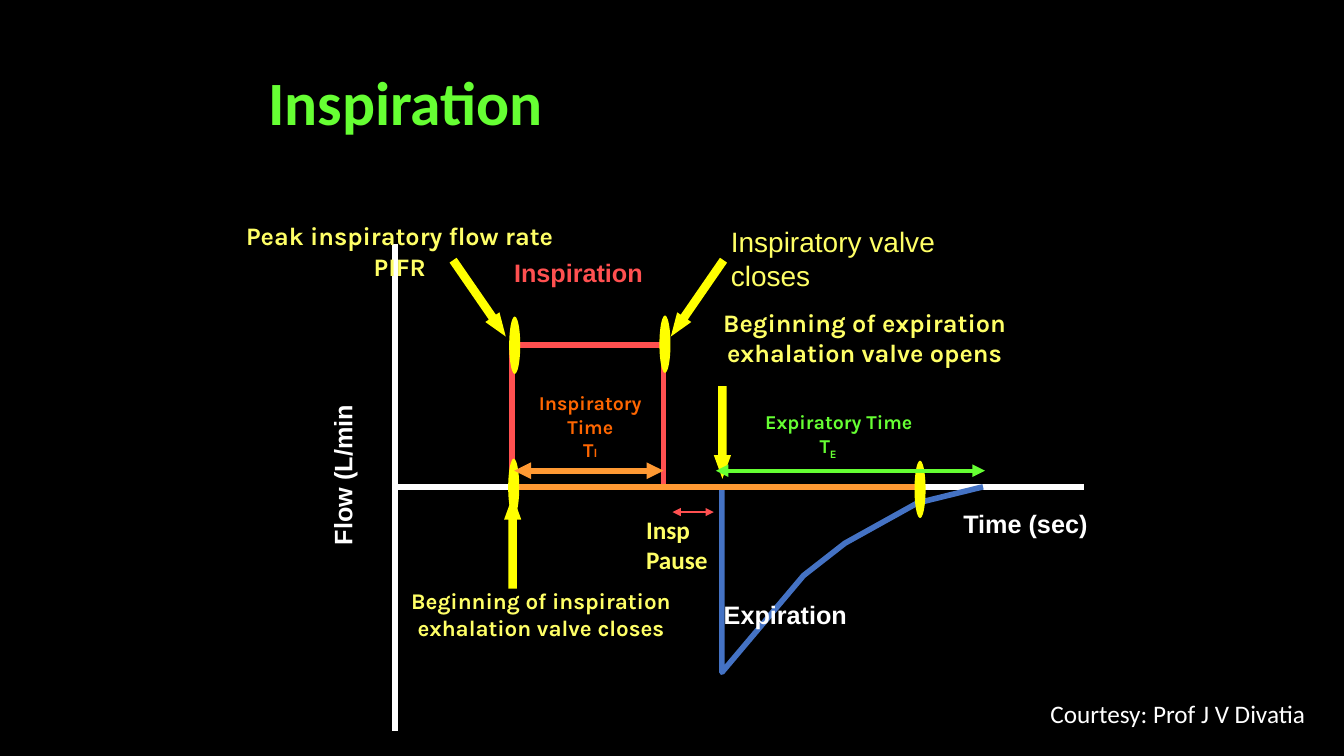
import pptx
import pptx.util
import pptx.dml.color
import pptx.enum.shapes
import pptx.enum.text
import pptx.oxml.ns
import lxml.etree

Inches = pptx.util.Inches
Pt = pptx.util.Pt
RGBColor = pptx.dml.color.RGBColor
MSO_SHAPE = pptx.enum.shapes.MSO_SHAPE
ALIGN = pptx.enum.text.PP_ALIGN

BLACK = RGBColor(0x00, 0x00, 0x00)
WHITE = RGBColor(0xFF, 0xFF, 0xFF)
GREEN = RGBColor(0x66, 0xFF, 0x33)
RED = RGBColor(0xFF, 0x50, 0x50)
BLUE = RGBColor(0x44, 0x72, 0xC4)
ORANGE = RGBColor(0xFF, 0x99, 0x33)
DARK_ORANGE = RGBColor(0xFF, 0x66, 0x00)
YELLOW = RGBColor(0xFF, 0xFF, 0x00)
PALE_YELLOW = RGBColor(0xFF, 0xFF, 0x66)

BASELINE = 4.83
TIME_ARROW_Y = 4.67


def add_child(parent, tag, **attributes):
    return lxml.etree.SubElement(parent, pptx.oxml.ns.qn(tag), **attributes)


def set_title(page, text):
    title = page.shapes.title
    title.left, title.top = Inches(2.42), Inches(0.42)
    title.width, title.height = Inches(8.92), Inches(1.25)
    frame = title.text_frame
    frame.text = text
    frame.margin_left = Inches(0.24)
    frame.vertical_anchor = pptx.enum.text.MSO_ANCHOR.MIDDLE
    para = frame.paragraphs[0]
    para.alignment = ALIGN.LEFT
    para.line_spacing = 0.9
    style_font(para.font, "Calibri", 44, GREEN, True)


def style_font(font, name, size, color, bold):
    font.name = name
    font.size = Pt(size)
    font.color.rgb = color
    font.bold = bold


def add_label(page, place, lines, font, size, color, bold=True,
              align=ALIGN.LEFT, wrap=False):
    box = page.shapes.add_textbox(*map(Inches, place))
    frame = box.text_frame
    frame.word_wrap = wrap
    for number, line in enumerate(lines):
        para = frame.add_paragraph() if number else frame.paragraphs[0]
        para.add_run().text = line
        para.alignment = align
        style_font(para.font, font, size, color, bold)
    return box


def add_line(page, start, end, color, width, double_headed=False):
    line = page.shapes.add_connector(
        pptx.enum.shapes.MSO_CONNECTOR.STRAIGHT,
        *map(Inches, start + end))
    line.line.color.rgb = color
    line.line.width = Pt(width)
    if double_headed:
        outline = line.line._get_or_add_ln()
        add_child(outline, "a:headEnd", type="triangle")
        add_child(outline, "a:tailEnd", type="triangle")
    add_child(line._element.spPr, "a:effectLst")


def add_curve(page, points, color):
    corners = [(Inches(x), Inches(y)) for x, y in points]
    builder = page.shapes.build_freeform(*corners[0])
    builder.add_line_segments(corners[1:], close=False)
    curve = builder.convert_to_shape()
    curve.shadow.inherit = False
    curve.fill.background()
    curve.line.color.rgb = color
    curve.line.width = Pt(4)


def add_yellow_shape(page, kind, left, top, width, height):
    shape = page.shapes.add_shape(
        kind, *map(Inches, (left, top, width, height)))
    shape.shadow.inherit = False
    shape.fill.solid()
    shape.fill.fore_color.rgb = YELLOW
    shape.line.fill.background()
    return shape


def add_pointer(page, left, top, rotation):
    arrow = add_yellow_shape(page, MSO_SHAPE.UP_ARROW, left, top, 0.17, 0.92)
    arrow.adjustments[0] = 0.5
    arrow.adjustments[1] = 1.375
    arrow.rotation = rotation


def add_flow_curves(page):
    add_line(page, (3.92, 2.42), (3.92, 7.25), WHITE, 4)
    add_line(page, (3.92, BASELINE), (10.75, BASELINE), WHITE, 4)
    add_curve(page, [(5.08, BASELINE), (5.08, 3.42), (6.58, 3.42),
                     (6.58, BASELINE)], RED)
    add_curve(page, [(7.16, BASELINE), (7.16, 6.67), (7.97, 5.71),
                     (8.38, 5.39), (9.1, 4.99), (9.75, BASELINE)], BLUE)
    add_line(page, (5.08, BASELINE), (9.08, BASELINE), ORANGE, 4)


def add_axis_labels(page):
    add_label(page, (5, 2.5, 1.49, 0.4), ["Inspiration"], "Arial", 18, RED)
    add_label(page, (7.08, 5.9, 1.44, 0.4), ["Expiration"], "Arial", 18, WHITE)
    add_label(page, (9.17, 4.99, 2, 0.4), ["Time (sec)"], "Arial", 18, WHITE,
              align=ALIGN.CENTER, wrap=True)
    flow = add_label(page, (2.55, 4.46, 1.69, 0.4), ["Flow (L/min"],
                     "Arial", 18, WHITE, wrap=True)
    flow.rotation = 270


def add_event_labels(page):
    events = [
        ((3.92, 5.78, 2.89, 0.64), 16,
         ["Beginning of inspiration", "exhalation valve closes"]),
        ((2.24, 2.14, 3.45, 0.7), 18, ["Peak inspiratory flow rate", "PIFR"]),
        ((7, 3, 3.15, 0.7), 18,
         ["Beginning of expiration", "exhalation valve opens"]),
    ]
    for place, size, lines in events:
        add_label(page, place, lines, "Karla", size, PALE_YELLOW,
                  align=ALIGN.CENTER)
    add_label(page, (7.15, 2.18, 2.6, 0.77), ["Inspiratory valve closes"],
              "Arial", 20, PALE_YELLOW, bold=False, wrap=True)


def add_time_spans(page):
    add_line(page, (5.1, TIME_ARROW_Y), (6.58, TIME_ARROW_Y), ORANGE, 4, True)
    add_line(page, (7.1, TIME_ARROW_Y), (9.77, TIME_ARROW_Y), GREEN, 3, True)
    add_line(page, (6.67, 5.08), (7.08, 5.08), RED, 1.5, True)

    inspiratory = add_label(page, (5.2, 3.83, 1.31, 0.81),
                            ["Inspiratory", "Time", "T"], "Karla", 14,
                            DARK_ORANGE, align=ALIGN.CENTER)
    span = inspiratory.text_frame.paragraphs[2].add_run()
    span.text = "I"
    span.font.size = Pt(9)

    expiratory = add_label(page, (7.49, 4.02, 1.77, 0.57),
                           ["Expiratory Time", "T"], "Karla", 14, GREEN)
    para = expiratory.text_frame.paragraphs[1]
    para._p.get_or_add_pPr().set("marL", str(Inches(0.54)))
    span = para.add_run()
    span.text = "E"
    span.font._element.set("baseline", "-25000")

    add_label(page, (6.31, 5.05, 0.83, 0.7), ["Insp", "Pause"],
              "Calibri", 18, PALE_YELLOW)


def main():
    deck = pptx.Presentation()
    deck.slide_width, deck.slide_height = Inches(13.33), Inches(7.5)
    page = deck.slides.add_slide(deck.slide_layouts[5])
    page.background.fill.solid()
    page.background.fill.fore_color.rgb = BLACK

    set_title(page, "Inspiration")
    add_flow_curves(page)
    add_axis_labels(page)
    add_event_labels(page)
    for left, top, rotation in [(5, 4.92, 0), (7.08, 3.83, 180),
                                (4.67, 2.5, 145.4), (6.83, 2.5, 214.6)]:
        add_pointer(page, left, top, rotation)
    for left, top in [(5.05, 3.14), (5.04, 4.55), (9.07, 4.57), (6.54, 3.13)]:
        add_yellow_shape(page, MSO_SHAPE.OVAL, left, top, 0.11, 0.57)
    add_time_spans(page)
    add_label(page, (10.32, 6.88, 2.8, 0.4), ["Courtesy: Prof J V Divatia"],
              "Calibri", 18, WHITE, bold=False, wrap=True)
    deck.save("out.pptx")


if __name__ == "__main__":
    main()
